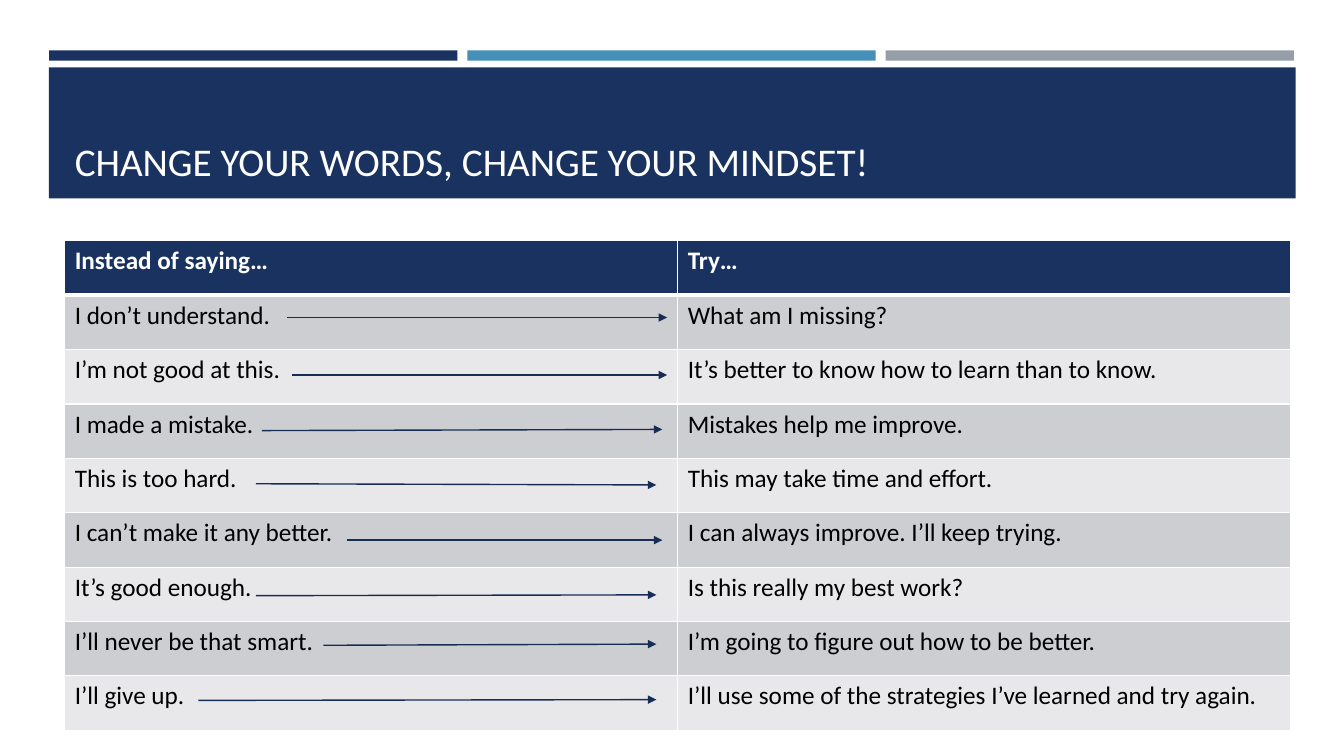
from dataclasses import dataclass

from lxml import etree
from pptx import Presentation
from pptx.dml.color import RGBColor
from pptx.enum.shapes import MSO_CONNECTOR, MSO_SHAPE
from pptx.enum.text import MSO_ANCHOR, MSO_AUTO_SIZE, PP_ALIGN
from pptx.oxml.ns import qn
from pptx.util import Cm, Pt

RECT = MSO_SHAPE.RECTANGLE
LINE = MSO_CONNECTOR.STRAIGHT
LOW = MSO_ANCHOR.BOTTOM
LEFT = PP_ALIGN.LEFT
FIXED = MSO_AUTO_SIZE.NONE

FONT = "Calibri"
NAVY, BLUE, GREY = "1A3260", "4590B8", "969FA7"
WHITE, BLACK, INK = "FFFFFF", "000000", "172D56"
BANDS = ("E8E8EA", "CDCED2")


@dataclass
class Box:
    left: float
    top: float
    width: float
    height: float
    fill: str


@dataclass
class Swap:
    old: str
    new: str
    start: float
    end: float
    tail: float
    head: float


BARS = [Box(1.24 + 10.54 * i, 1.27, 10.29, 0.26, fill)
        for i, fill in enumerate((NAVY, BLUE, GREY))]
PANEL = Box(1.23, 1.7, 31.42, 3.3, NAVY)

SWAPS = [
    Swap("I don’t understand.", "What am I missing?", 7.24, 16.81, 8, 8),
    Swap("I’m not good at this.", "It’s better to know how to learn than to know.",
         7.37, 16.81, 9.45, 9.45),
    Swap("I made a mistake.", "Mistakes help me improve.", 6.6, 16.69, 10.85, 10.82),
    Swap("This is too hard.", "This may take time and effort.", 6.45, 16.54, 12.19, 12.22),
    Swap("I can’t make it any better.", "I can always improve. I’ll keep trying.",
         8.74, 16.69, 13.61, 13.61),
    Swap("It’s good enough.", "Is this really my best work?", 6.45, 16.54, 15.01, 14.99),
    Swap("I’ll never be that smart.", "I’m going to figure out how to be better.",
         8.15, 16.54, 16.26, 16.23),
    Swap("I’ll give up.", "I’ll use some of the strategies I’ve learned and try again.",
         5, 16.54, 17.65, 17.63),
]


def paint(target, code: str) -> None:
    target.solid()
    target.fore_color.rgb = RGBColor.from_string(code)


def style(para, size: float, code: str, bold: bool = False) -> None:
    para.font.name = FONT
    para.font.size = Pt(size)
    para.font.bold = bold
    para.font.color.rgb = RGBColor.from_string(code)


def add_box(slide, box: Box) -> None:
    shape = slide.shapes.add_shape(
        RECT, Cm(box.left), Cm(box.top), Cm(box.width), Cm(box.height))
    shape.shadow.inherit = False
    paint(shape.fill, box.fill)
    shape.line.fill.background()


def add_title(slide, text: str) -> None:
    title = slide.shapes.title
    title.left, title.top = Cm(1.63), Cm(1.96)
    title.width, title.height = Cm(30.63), Cm(2.82)
    frame = title.text_frame
    frame.text = text
    frame.word_wrap = True
    frame.auto_size = FIXED
    frame.vertical_anchor = LOW
    para = frame.paragraphs[0]
    para.alignment = LEFT
    style(para, 28, WHITE)
    title.element.getparent().append(title.element)


def add_edge(cell, side: str, width: float) -> None:
    props = cell._tc.get_or_add_tcPr()
    edge = etree.SubElement(props, qn(f"a:ln{side}"), w=str(Pt(width)))
    fill = etree.SubElement(edge, qn("a:solidFill"))
    etree.SubElement(fill, qn("a:srgbClr"), val=WHITE)


def add_grid(slide, swaps: list[Swap]) -> None:
    rows = [("Instead of saying…", "Try…")] + [(s.old, s.new) for s in swaps]
    table = slide.shapes.add_table(
        len(rows), 2, Cm(1.63), Cm(6.07), Cm(30.9), Cm(1.37 * len(rows))).table
    for i, row in enumerate(rows):
        for j, text in enumerate(row):
            cell = table.cell(i, j)
            cell.text = text
            first = i == 0
            style(cell.text_frame.paragraphs[0], 18, WHITE if first else BLACK, first)
            for side in "LRTB":
                thick = (i, side) in ((0, "B"), (1, "T"))
                add_edge(cell, side, 3 if thick else 1)
            paint(cell.fill, NAVY if first else BANDS[i % 2])


def add_arrow(slide, swap: Swap) -> None:
    arrow = slide.shapes.add_connector(
        LINE, Cm(swap.start), Cm(swap.tail), Cm(swap.end), Cm(swap.head))
    paint(arrow.line.fill, INK)
    arrow.line.width = Pt(1)
    etree.SubElement(arrow.line._get_or_add_ln(), qn("a:tailEnd"), type="triangle")
    etree.SubElement(arrow.element.spPr, qn("a:effectLst"))


def main() -> None:
    deck = Presentation()
    deck.slide_width, deck.slide_height = Cm(33.87), Cm(19.05)
    slide = deck.slides.add_slide(deck.slide_layouts[5])
    for box in BARS + [PANEL]:
        add_box(slide, box)
    add_title(slide, "CHANGE YOUR WORDS, CHANGE YOUR MINDSET!")
    add_grid(slide, SWAPS)
    for swap in SWAPS:
        add_arrow(slide, swap)
    deck.save("out.pptx")


if __name__ == "__main__":
    main()
